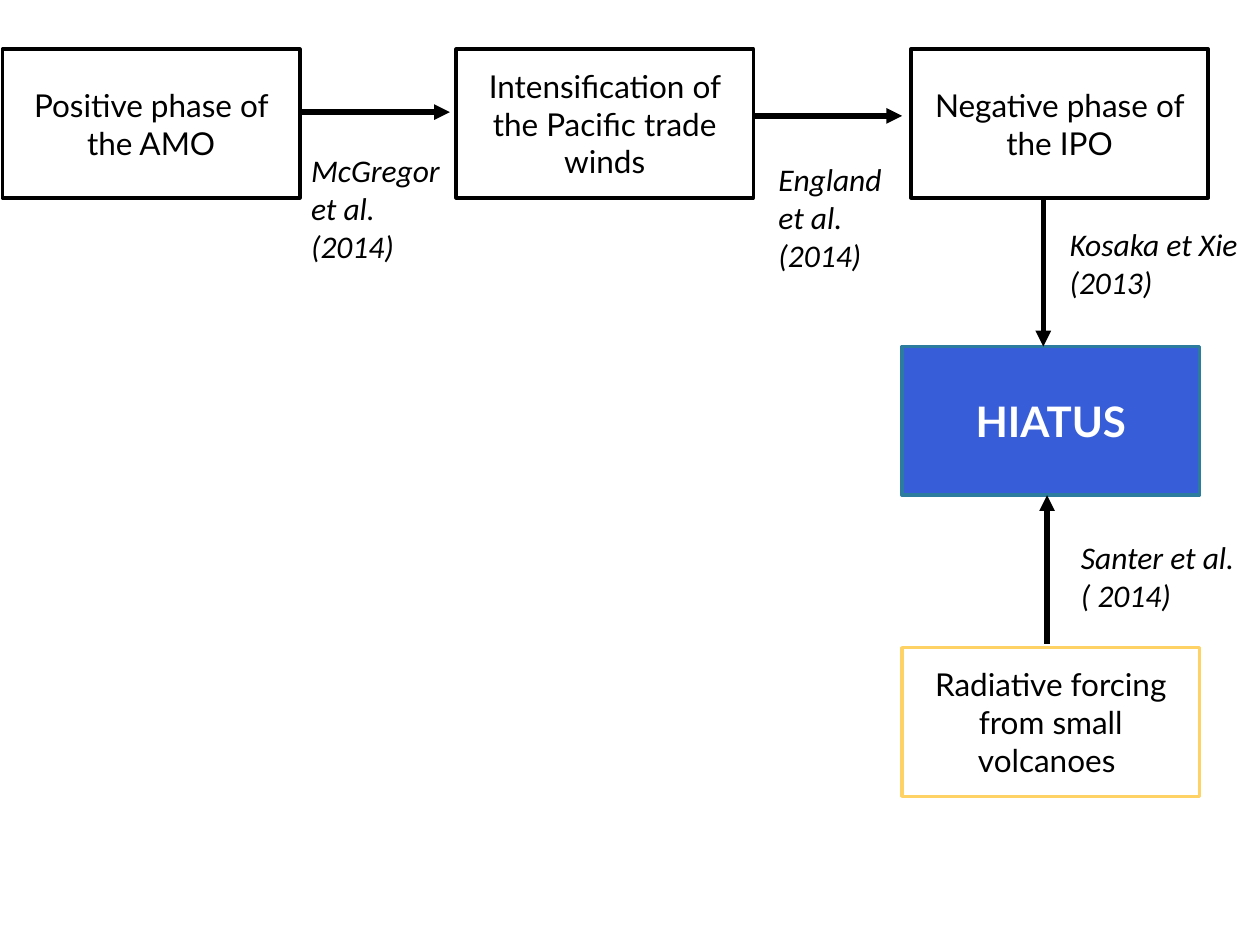
from lxml.etree import SubElement
from pptx import Presentation
from pptx.dml.color import RGBColor
from pptx.enum.shapes import MSO_CONNECTOR, MSO_SHAPE
from pptx.enum.text import MSO_ANCHOR, PP_ALIGN
from pptx.oxml.ns import qn
from pptx.util import Inches, Pt

COLORS = {
    "black": "000000",
    "white": "FFFFFF",
    "hiatus": "375ED8",
    "hiatus_border": "2C7C9F",
    "volcano_border": "FFD266",
}
BOX_WIDTH, BOX_HEIGHT = 2.36, 1.18
TOP_ROW, RIGHT_COLUMN = 0.39, 7.16


def color(name):
    return RGBColor.from_string(COLORS[name])


def format_text(shape, text, font_name, size=18, font_color="black",
                bold=False, italic=False, alignment=PP_ALIGN.LEFT):
    text_frame = shape.text_frame
    text_frame.word_wrap = True
    text_frame.text = text
    paragraph = text_frame.paragraphs[0]
    paragraph.alignment = alignment
    font = paragraph.runs[0].font
    font.name = font_name
    font.size = Pt(size)
    font.bold = bold
    font.italic = italic
    font.color.rgb = color(font_color)


def add_box(slide, left, top, text, fill="white", border="black", **text_style):
    shape = slide.shapes.add_shape(MSO_SHAPE.RECTANGLE, Inches(left), Inches(top),
                                   Inches(BOX_WIDTH), Inches(BOX_HEIGHT))
    shape.shadow.inherit = False
    shape.fill.solid()
    shape.fill.fore_color.rgb = color(fill)
    shape.line.color.rgb = color(border)
    shape.line.width = Pt(2)
    shape.text_frame.vertical_anchor = MSO_ANCHOR.MIDDLE
    format_text(shape, text, "Lato", alignment=PP_ALIGN.CENTER, **text_style)


def add_citation(slide, left, top, width, height, text):
    shape = slide.shapes.add_textbox(Inches(left), Inches(top),
                                     Inches(width), Inches(height))
    format_text(shape, text, "Calibri", italic=True)


def add_arrow(slide, start_x, start_y, end_x, end_y):
    connector = slide.shapes.add_connector(
        MSO_CONNECTOR.STRAIGHT, Inches(start_x), Inches(start_y),
        Inches(end_x), Inches(end_y))
    connector.line.color.rgb = color("black")
    connector.line.width = Pt(3)
    properties = connector.element.spPr
    SubElement(properties.find(qn("a:ln")), qn("a:tailEnd"), type="triangle")
    SubElement(properties, qn("a:effectLst"))


def main():
    presentation = Presentation()
    presentation.slide_width = Inches(10)
    presentation.slide_height = Inches(7.5)
    slide = presentation.slides.add_slide(presentation.slide_layouts[6])

    for left, text in (
        (0.02, "Positive phase of the AMO"),
        (3.62, "Intensification of the Pacific trade winds"),
        (7.23, "Negative phase of the IPO"),
    ):
        add_box(slide, left, TOP_ROW, text)
    add_box(slide, RIGHT_COLUMN, 2.75, "HIATUS", fill="hiatus",
            border="hiatus_border", size=24, font_color="white", bold=True)
    add_box(slide, RIGHT_COLUMN, 5.14, "Radiative forcing from small volcanoes ",
            border="volcano_border")

    for citation in (
        (2.37, 1.15, 1.31, 1.01, "McGregor et al.(2014)"),
        (6.08, 1.22, 1.06, 1.01, "England et al. (2014)"),
        (8.39, 1.74, 1.9, 0.71, "Kosaka et Xie (2013)"),
        (8.48, 4.22, 1.52, 0.71, "Santer et al. ( 2014)"),
    ):
        add_citation(slide, *citation)

    for arrow in (
        (2.39, 0.89, 3.57, 0.89),
        (5.98, 0.92, 7.16, 0.92),
        (8.28, 1.57, 8.28, 2.75),
        (8.31, 5.11, 8.31, 3.93),
    ):
        add_arrow(slide, *arrow)

    presentation.save("out.pptx")


if __name__ == "__main__":
    main()
